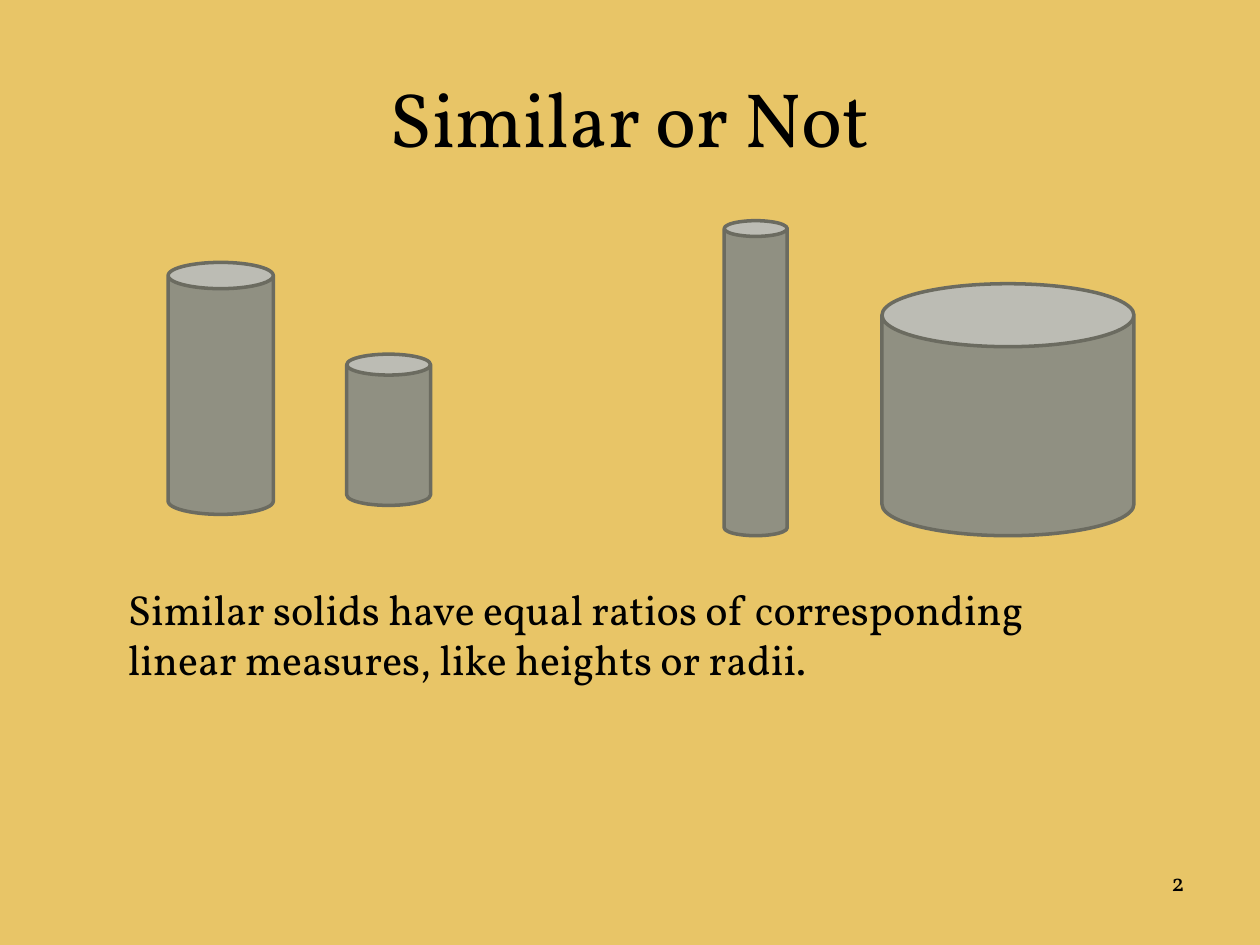
from pptx import Presentation
from pptx.dml.color import RGBColor
from pptx.enum.shapes import MSO_SHAPE
from pptx.enum.text import MSO_ANCHOR, PP_ALIGN
from pptx.util import Cm, Pt

COLORS = {
    "background": "E8C567",
    "text": "000000",
    "can_fill": "909082",
    "can_line": "6B6B60",
}
FONT_NAME = "Vollkorn"


def color(name):
    return RGBColor.from_string(COLORS[name])


def add_text(slide, box, text, size, alignment=PP_ALIGN.LEFT, anchor=MSO_ANCHOR.TOP):
    shape = slide.shapes.add_textbox(*map(Cm, box))
    frame = shape.text_frame
    for name, value in {"word_wrap": True, "vertical_anchor": anchor}.items():
        setattr(frame, name, value)
    paragraph = frame.paragraphs[0]
    paragraph.alignment = alignment
    run = paragraph.add_run()
    run.text = text
    for name, value in {"name": FONT_NAME, "size": Pt(size)}.items():
        setattr(run.font, name, value)
    run.font.color.rgb = color("text")


def add_can_pair(slide, box, cans):
    left, top, pair_width, pair_height = box
    for offset, lift, width, height in cans:
        can_top = top + pair_height - lift - height
        shape = slide.shapes.add_shape(
            MSO_SHAPE.CAN, *map(Cm, (left + offset, can_top, width, height))
        )
        shape.shadow.inherit = False
        shape.fill.solid()
        shape.fill.fore_color.rgb = color("can_fill")
        shape.line.color.rgb = color("can_line")
        shape.line.width = Pt(2)


def build_slide(presentation):
    slide = presentation.slides.add_slide(presentation.slide_layouts[6])
    slide.background.fill.solid()
    slide.background.fill.fore_color.rgb = color("background")
    add_text(slide, (1.27, 0.76, 22.86, 3.18), "Similar or Not", 44,
             PP_ALIGN.CENTER, MSO_ANCHOR.MIDDLE)
    add_text(slide, (18.21, 17.35, 5.92, 1.32), "2", 14, PP_ALIGN.RIGHT)
    add_can_pair(slide, (3.39, 5.29, 5.29, 5.08),
                 [(0, 0, 2.12, 5.08), (3.6, 0.18, 1.69, 3.05)])
    add_can_pair(slide, (14.6, 4.45, 8.26, 6.35),
                 [(0, 0, 1.27, 6.35), (3.18, 0, 5.08, 5.08)])
    add_text(slide, (2.33, 11.64, 19.47, 2.31),
             "Similar solids have equal ratios of corresponding linear measures, "
             "like heights or radii.", 24)


def main():
    presentation = Presentation()
    for name, value in {"slide_width": Cm(25.4), "slide_height": Cm(19.05)}.items():
        setattr(presentation, name, value)
    build_slide(presentation)
    presentation.save("out.pptx")


if __name__ == "__main__":
    main()
